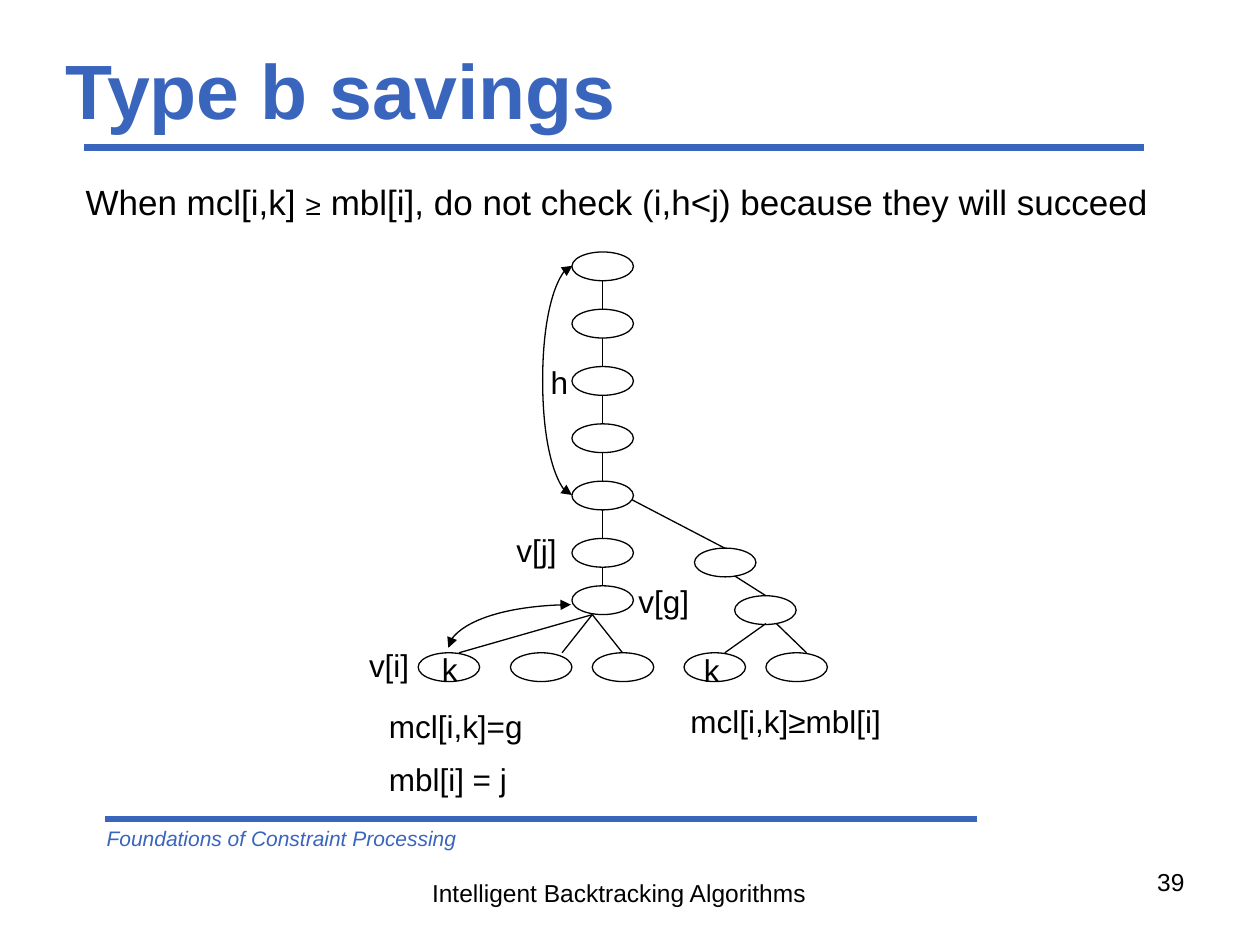
from dataclasses import dataclass
from itertools import pairwise

from pptx import Presentation
from pptx.dml.color import RGBColor
from pptx.enum.shapes import MSO_CONNECTOR, MSO_SHAPE
from pptx.enum.text import MSO_ANCHOR, MSO_AUTO_SIZE, PP_ALIGN
from pptx.oxml.ns import qn
from pptx.util import Cm, Pt

STRAIGHT, CURVE = MSO_CONNECTOR.STRAIGHT, MSO_CONNECTOR.CURVE
OVAL = MSO_SHAPE.OVAL
LEFT, RIGHT = PP_ALIGN.LEFT, PP_ALIGN.RIGHT
TOP, MIDDLE = MSO_ANCHOR.TOP, MSO_ANCHOR.MIDDLE
NO_AUTOFIT, GROW = MSO_AUTO_SIZE.NONE, MSO_AUTO_SIZE.SHAPE_TO_FIT_TEXT


@dataclass(frozen=True)
class Theme:
    font: str = "Arial"
    blue: RGBColor = RGBColor(0x3A, 0x65, 0xBC)
    black: RGBColor = RGBColor(0, 0, 0)
    title: int = 44
    body: int = 20
    symbol: int = 16
    label: int = 18
    footer: int = 14
    course: int = 12
    rule: float = 4
    edge: float = 0.75


THEME = Theme()


@dataclass(frozen=True)
class Node:
    left: float
    top: float
    width: float = 1.24
    height: float = 0.58

    @property
    def middle(self) -> float:
        return self.left + self.width / 2

    @property
    def bottom(self) -> float:
        return self.top + self.height


@dataclass(frozen=True)
class Label:
    text: str
    left: float
    top: float
    width: float
    height: float = 1.02
    size: int = THEME.label
    wrap: bool = False
    color: RGBColor = THEME.black
    italic: bool = False
    align: PP_ALIGN = LEFT
    space_before: float = 0


def apply_format(target, values: dict) -> None:
    for name, value in values.items():
        setattr(target, name, value)


def format_font(font, size: int, color: RGBColor = THEME.black, **extra) -> None:
    apply_format(font, {"name": THEME.font, "size": Pt(size), **extra})
    font.color.rgb = color


def place(shape, left: float, top: float, width: float, height: float) -> None:
    apply_format(shape, {"left": Cm(left), "top": Cm(top),
                         "width": Cm(width), "height": Cm(height)})


def draw_node(shapes, node: Node) -> None:
    shape = shapes.add_shape(OVAL, Cm(node.left), Cm(node.top),
                             Cm(node.width), Cm(node.height))
    shape.shadow.inherit = False
    shape.fill.background()
    shape.line.color.rgb = THEME.black
    shape.line.width = Pt(THEME.edge)


def draw_line(shapes, start: tuple, end: tuple, color: RGBColor = THEME.black,
              width: float = THEME.edge, kind: MSO_CONNECTOR = STRAIGHT):
    connector = shapes.add_connector(kind, *map(Cm, (*start, *end)))
    connector.line.color.rgb = color
    connector.line.width = Pt(width)
    properties = connector._element.spPr
    properties.append(properties.makeelement(qn("a:effectLst"), {}))
    return connector


def draw_double_arrow(shapes, start: tuple, end: tuple, preset: str,
                      adjustment: int | None = None) -> None:
    connector = draw_line(shapes, start, end, kind=CURVE)
    properties = connector._element.spPr
    geometry = properties.find(qn("a:prstGeom"))
    geometry.set("prst", preset)
    if adjustment is not None:
        guides = geometry.find(qn("a:avLst"))
        guides.append(guides.makeelement(
            qn("a:gd"), {"name": "adj1", "fmla": f"val {adjustment}"}))
    line = properties.find(qn("a:ln"))
    for tag in ("a:headEnd", "a:tailEnd"):
        line.append(line.makeelement(qn(tag), {"type": "triangle"}))


def draw_label(shapes, label: Label) -> None:
    box = shapes.add_textbox(Cm(label.left), Cm(label.top),
                             Cm(label.width), Cm(label.height))
    frame = box.text_frame
    apply_format(frame, {"word_wrap": label.wrap, "text": label.text,
                         "auto_size": NO_AUTOFIT if label.wrap else GROW})
    for index, paragraph in enumerate(frame.paragraphs):
        paragraph.alignment = label.align
        if index:
            paragraph.space_before = Pt(label.space_before)
        format_font(paragraph.font, label.size, label.color, italic=label.italic)


def fill_placeholders(slide) -> None:
    title = slide.shapes.title
    place(title, 1.07, 0.84, 22.86, 1.9)
    title.text_frame.text = "Type b savings"
    apply_format(title.text_frame, {"vertical_anchor": MIDDLE, "auto_size": NO_AUTOFIT})
    paragraph = title.text_frame.paragraphs[0]
    paragraph.alignment = LEFT
    format_font(paragraph.font, THEME.title, THEME.blue, bold=True)

    body = slide.placeholders[1]
    place(body, 1.47, 3.51, 22.02, 1.14)
    apply_format(body.text_frame, {"vertical_anchor": TOP, "auto_size": NO_AUTOFIT})
    paragraph = body.text_frame.paragraphs[0]
    paragraph.space_before = Pt(0)
    properties = paragraph._p.get_or_add_pPr()
    properties.set("marL", str(Cm(0.95)))
    properties.set("indent", str(-Cm(0.95)))
    properties.append(properties.makeelement(qn("a:buNone"), {}))
    for text, size in (("When mcl[i,k] ", THEME.body), ("≥", THEME.symbol),
                       (" mbl[i], do not check (i,h<j) because they will succeed",
                        THEME.body)):
        run = paragraph.add_run()
        run.text = text
        format_font(run.font, size)


def draw_main_tree(shapes) -> None:
    chain = [Node(11.53, 5.08 + 1.155 * level) for level in range(6)]
    chain.append(Node(11.53, 11.81))
    leaves = [Node(left, 13.16) for left in (8.43, 10.29, 11.94)]
    for node in chain + leaves:
        draw_node(shapes, node)
    for upper, lower in pairwise(chain):
        draw_line(shapes, (upper.middle, upper.bottom), (lower.middle, lower.top))
    for target in (9.25, 11.33, 12.55):
        draw_line(shapes, (11.94, chain[-1].bottom), (target, 13.16))
    draw_line(shapes, (12.75, 10.08), (14.61, 11.05))


def draw_side_tree(shapes) -> None:
    for left, top in ((14, 11.05), (14.81, 12.01), (13.79, 13.16), (15.44, 13.16)):
        draw_node(shapes, Node(left, top))
    for start, end in (((14.81, 11.61), (15.44, 12.01)),
                       ((15.44, 12.57), (14.61, 13.16)),
                       ((15.65, 12.57), (16.26, 13.16))):
        draw_line(shapes, start, end)
    draw_label(shapes, Label("k", 13.94, 13, 0.84))


LABELS = (
    # Footer
    Label("Foundations of Constraint Processing", 1.9, 16.51, 13.34, 0.76,
          THEME.course, True, THEME.blue, True),
    Label("Intelligent Backtracking Algorithms", 8.46, 17.58, 8.1, 0.86,
          THEME.footer, True),
    Label("39", 18.21, 17.35, 5.92, 1.32, THEME.footer, True, align=RIGHT),
    # Tree labels
    Label("h", 10.85, 7.19, 0.86),
    Label("v[i]", 7.19, 12.9, 1.34),
    Label("k", 8.66, 12.98, 0.84),
    Label("v[j]", 10.16, 10.59, 1.34),
    Label("v[g]", 12.62, 11.61, 1.6),
    # Results under the leaves
    Label("mcl[i,k]=g\nmbl[i] = j", 7.59, 14.12, 3.3, 2.16, wrap=True, space_before=9),
    Label("mcl[i,k]≥mbl[i]", 13.67, 14.02, 4.45),
)


def main() -> None:
    presentation = Presentation()
    apply_format(presentation, {"slide_width": Cm(25.4), "slide_height": Cm(19.05)})
    slide = presentation.slides.add_slide(presentation.slide_layouts[1])
    shapes = slide.shapes
    fill_placeholders(slide)

    # Rules under the title and above the footer
    for start, end in (((1.7, 2.97), (23.06, 2.97)), ((2.11, 16.51), (19.69, 16.51))):
        draw_line(shapes, start, end, THEME.blue, THEME.rule)

    # Search trees and the jumps between levels
    draw_main_tree(shapes)
    draw_side_tree(shapes.add_group_shape().shapes)
    draw_double_arrow(shapes, (11.51, 12.19), (9.04, 13.06), "curvedConnector2")
    draw_double_arrow(shapes, (11.53, 9.98), (11.54, 5.36), "curvedConnector3", -5900000)

    for label in LABELS:
        draw_label(shapes, label)
    presentation.save("out.pptx")


if __name__ == "__main__":
    main()
